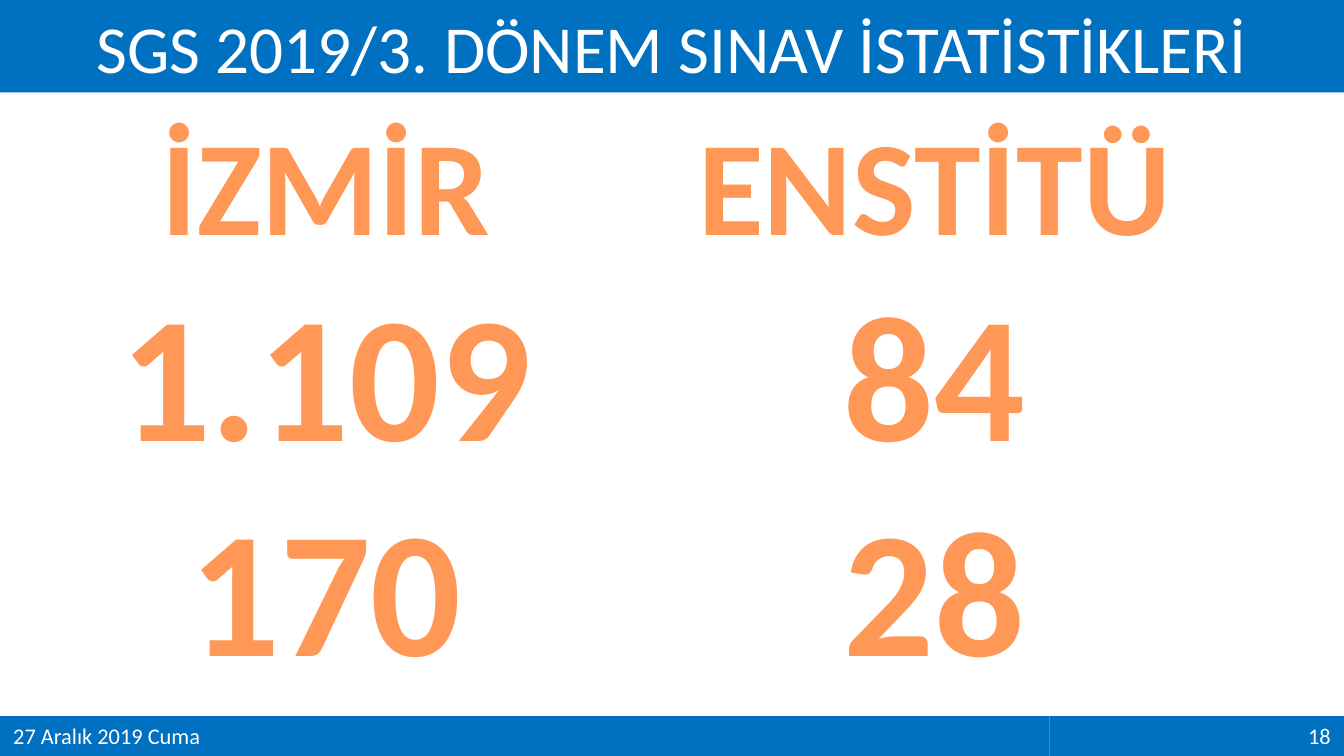
from dataclasses import dataclass

from pptx import Presentation
from pptx.dml.color import RGBColor
from pptx.enum import shapes, text
from pptx.util import Pt

COLORS = {"band": "0070C0", "band_text": "FFFFFF", "figure": "FF9856"}
FONT = "Calibri"
SLIDE_WIDTH, SLIDE_HEIGHT = 720, 405
TITLE_HEIGHT = 49.5
FOOTER_TOP = 383.6
COLUMN_TOP, COLUMN_WIDTH, COLUMN_HEIGHT = 50.4, 281.5, 327
HEADING_SIZE, FIGURE_SIZE = 72, 96


@dataclass
class FooterBand:
    label: str
    left: float
    width: float
    align: text.PP_ALIGN


@dataclass
class ExamColumn:
    heading: str
    figures: tuple[str, ...]
    left: float


FOOTER = [
    FooterBand("27 Aralık 2019 Cuma", 0, 562.3, text.PP_ALIGN.LEFT),
    FooterBand("18", 562.3, SLIDE_WIDTH - 562.3, text.PP_ALIGN.RIGHT),
]
COLUMNS = [
    ExamColumn("İZMİR", ("1.109", "170"), 33.8),
    ExamColumn("ENSTİTÜ", ("84", "28"), 360),
]


def style_paragraph(paragraph, size: float, color: str, align: text.PP_ALIGN,
                    bold: bool = False) -> None:
    paragraph.alignment = align
    font = paragraph.font
    font.name, font.size, font.bold = FONT, Pt(size), bold
    font.color.rgb = RGBColor.from_string(COLORS[color])


def fill_band(band, label: str, size: float, align: text.PP_ALIGN) -> None:
    """Colour a title or footer band and write its single line."""
    band.fill.solid()
    band.fill.fore_color.rgb = RGBColor.from_string(COLORS["band"])
    band.line.fill.background()
    frame = band.text_frame
    frame.text = label
    frame.word_wrap = True
    frame.auto_size = text.MSO_AUTO_SIZE.NONE
    frame.vertical_anchor = text.MSO_ANCHOR.MIDDLE
    style_paragraph(frame.paragraphs[0], size, "band_text", align)


def draw_title(slide, label: str) -> None:
    title = slide.shapes.title
    title.left, title.top = Pt(0), Pt(0)
    title.width, title.height = Pt(SLIDE_WIDTH), Pt(TITLE_HEIGHT)
    fill_band(title, label, 36, text.PP_ALIGN.CENTER)


def draw_footer_band(slide, part: FooterBand) -> None:
    band = slide.shapes.add_shape(
        shapes.MSO_SHAPE.RECTANGLE, Pt(part.left), Pt(FOOTER_TOP),
        Pt(part.width), Pt(SLIDE_HEIGHT - FOOTER_TOP))
    band.shadow.inherit = False
    fill_band(band, part.label, 12, part.align)


def draw_column(slide, column: ExamColumn) -> None:
    frame = slide.shapes.add_textbox(
        Pt(column.left), Pt(COLUMN_TOP),
        Pt(COLUMN_WIDTH), Pt(COLUMN_HEIGHT)).text_frame
    frame.word_wrap = True
    frame.text = "\n".join((column.heading, *column.figures))
    for index, paragraph in enumerate(frame.paragraphs):
        size = FIGURE_SIZE if index else HEADING_SIZE
        style_paragraph(paragraph, size, "figure", text.PP_ALIGN.CENTER, bold=True)


def main() -> None:
    deck = Presentation()
    deck.slide_width, deck.slide_height = Pt(SLIDE_WIDTH), Pt(SLIDE_HEIGHT)
    slide = deck.slides.add_slide(deck.slide_layouts.get_by_name("Title Only"))
    draw_title(slide, "SGS 2019/3. DÖNEM SINAV İSTATİSTİKLERİ")
    for part in FOOTER:
        draw_footer_band(slide, part)
    for column in COLUMNS:
        draw_column(slide, column)
    deck.save("out.pptx")


if __name__ == "__main__":
    main()
